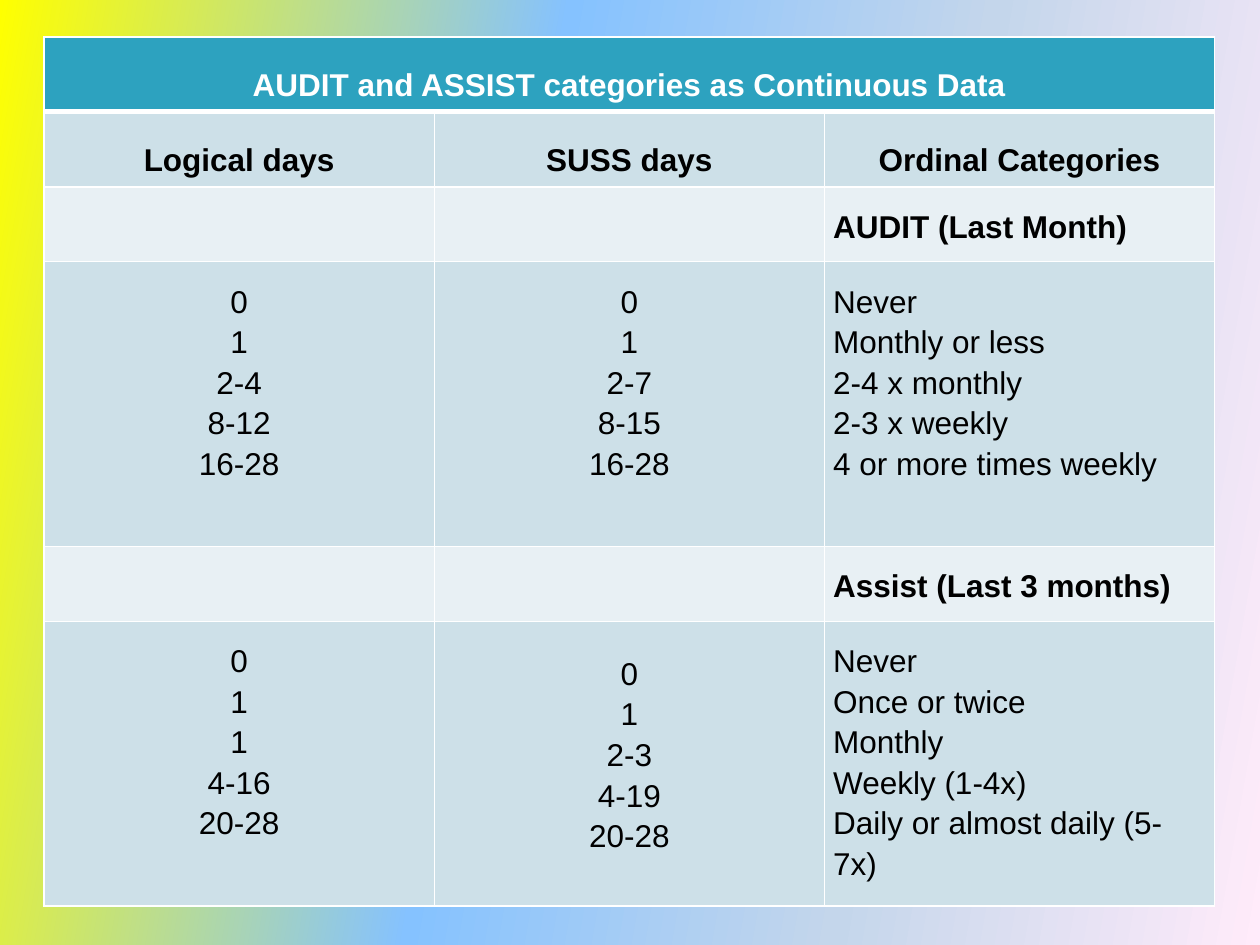
from lxml import etree
from pptx import Presentation
from pptx.dml.color import RGBColor
from pptx.enum.text import MSO_ANCHOR, PP_ALIGN
from pptx.oxml import parse_xml
from pptx.oxml.ns import qn
from pptx.util import Inches, Pt

CENTER, LEFT = PP_ALIGN.CENTER, PP_ALIGN.LEFT
TOP, MIDDLE = MSO_ANCHOR.TOP, MSO_ANCHOR.MIDDLE
DRAWING = "http://schemas.openxmlformats.org/drawingml/2006/main"
WHITE, BLACK, TEAL, PALE, PALEST = "FFFFFF", "000000", "2DA2BF", "CDE0E8", "E8F0F4"
SHORT_ROW, TALL_ROW = 0.595, 2.26
GRADIENT = [(0, "FFFF00"), (40, "85C2FF"), (70, "C4D6EB"), (100, "FFEBFA")]

ROWS = [
    ["AUDIT and ASSIST categories as Continuous Data", "", ""],
    ["Logical days", "SUSS days", "Ordinal Categories"],
    ["", "", "AUDIT (Last Month)"],
    [
        "0\n1\n2-4\n8-12\n16-28",
        "0\n1\n2-7\n8-15\n16-28",
        "Never\nMonthly or less\n2-4 x monthly\n2-3 x weekly\n4 or more times weekly",
    ],
    ["", "", "Assist (Last 3 months)"],
    [
        "0\n1\n1\n4-16\n20-28",
        "0\n1\n2-3\n4-19\n20-28",
        "Never\nOnce or twice\nMonthly\nWeekly (1-4x)\nDaily or almost daily (5-7x)",
    ],
]


def color(value):
    """Turn a hex string into a colour."""
    return RGBColor.from_string(value)


class SlideBuilder:
    """Hold the text style and the current slide."""

    font, size, line_spacing = "Arial", 18, 1.15

    def __init__(self, presentation):
        self.width, self.height = presentation.slide_width, presentation.slide_height
        self.slide = presentation.slides.add_slide(presentation.slide_layouts[6])

    def background(self, stops, angle):
        """Fill the background with a linear gradient."""
        self.slide.background.fill.solid()
        solid = next(self.slide.background._cSld.iter(qn("a:solidFill")))
        marks = "".join(
            f'<a:gs pos="{position * 1000}"><a:srgbClr val="{value}"/></a:gs>'
            for position, value in stops
        )
        gradient = parse_xml(
            f'<a:gradFill xmlns:a="{DRAWING}" rotWithShape="1"><a:gsLst>{marks}</a:gsLst>'
            f'<a:lin ang="{angle * 60000}" scaled="0"/></a:gradFill>'
        )
        solid.getparent().replace(solid, gradient)

    def table(self, left, top, width, heights, columns):
        """Add an unstyled table placed by shares of the slide size."""
        frame = self.slide.shapes.add_table(
            len(heights), columns, int(self.width * left), int(self.height * top),
            int(self.width * width), Inches(sum(heights)),
        )
        table = frame.table
        table.first_row = table.horz_banding = False
        for row, height in zip(table.rows, heights):
            row.height = Inches(height)
        return table

    def borders(self, cell, bottom=1):
        """Draw white lines around a cell."""
        properties = cell._tc.get_or_add_tcPr()
        for index, (side, points) in enumerate(zip("LRTB", (1, 1, 1, bottom))):
            line = etree.Element(qn(f"a:ln{side}"), w=str(Pt(points)))
            fill = etree.SubElement(line, qn("a:solidFill"))
            etree.SubElement(fill, qn("a:srgbClr"), val=WHITE)
            properties.insert(index, line)

    def cell(self, cell, text, fill, ink=BLACK, bold=False, align=LEFT, anchor=TOP, inset=0.14):
        """Fill a cell and set its text, one paragraph a line."""
        cell.fill.solid()
        cell.fill.fore_color.rgb = color(fill)
        cell.vertical_anchor = anchor
        cell.margin_left = cell.margin_right = Inches(0.07)
        cell.margin_top, cell.margin_bottom = Inches(inset), 0
        cell.text_frame.text = text
        for paragraph in cell.text_frame.paragraphs:
            paragraph.alignment = align
            paragraph.line_spacing = self.line_spacing
            for run in paragraph.runs:
                run.font.name, run.font.size = self.font, Pt(self.size)
                run.font.bold = bold
                run.font.color.rgb = color(ink)


def main():
    """Build the slide and save it."""
    presentation = Presentation()
    presentation.slide_width, presentation.slide_height = Inches(10), Inches(7.5)
    builder = SlideBuilder(presentation)
    builder.background(GRADIENT, 10)

    tall = [any("\n" in text for text in row) for row in ROWS]
    heights = [TALL_ROW if is_tall else SHORT_ROW for is_tall in tall]
    table = builder.table(0.035, 0.039, 0.929, heights, 3)
    last = len(ROWS) - 1
    for row, texts in enumerate(ROWS):
        title, heading = row == 0, row < 2
        for column, text in enumerate(texts):
            cell = table.cell(row, column)
            builder.cell(
                cell, text,
                fill=TEAL if title else PALE if row % 2 else PALEST,
                ink=WHITE if title else BLACK,
                bold=not tall[row],
                align=CENTER if heading or column < 2 else LEFT,
                anchor=MIDDLE if heading else TOP,
                inset=0.24 if (row, column) == (last, 1) else 0.14,
            )
            builder.borders(cell, bottom=3 if title else 1)
    table.cell(0, 0).merge(table.cell(0, 2))
    presentation.save("out.pptx")


if __name__ == "__main__":
    main()
